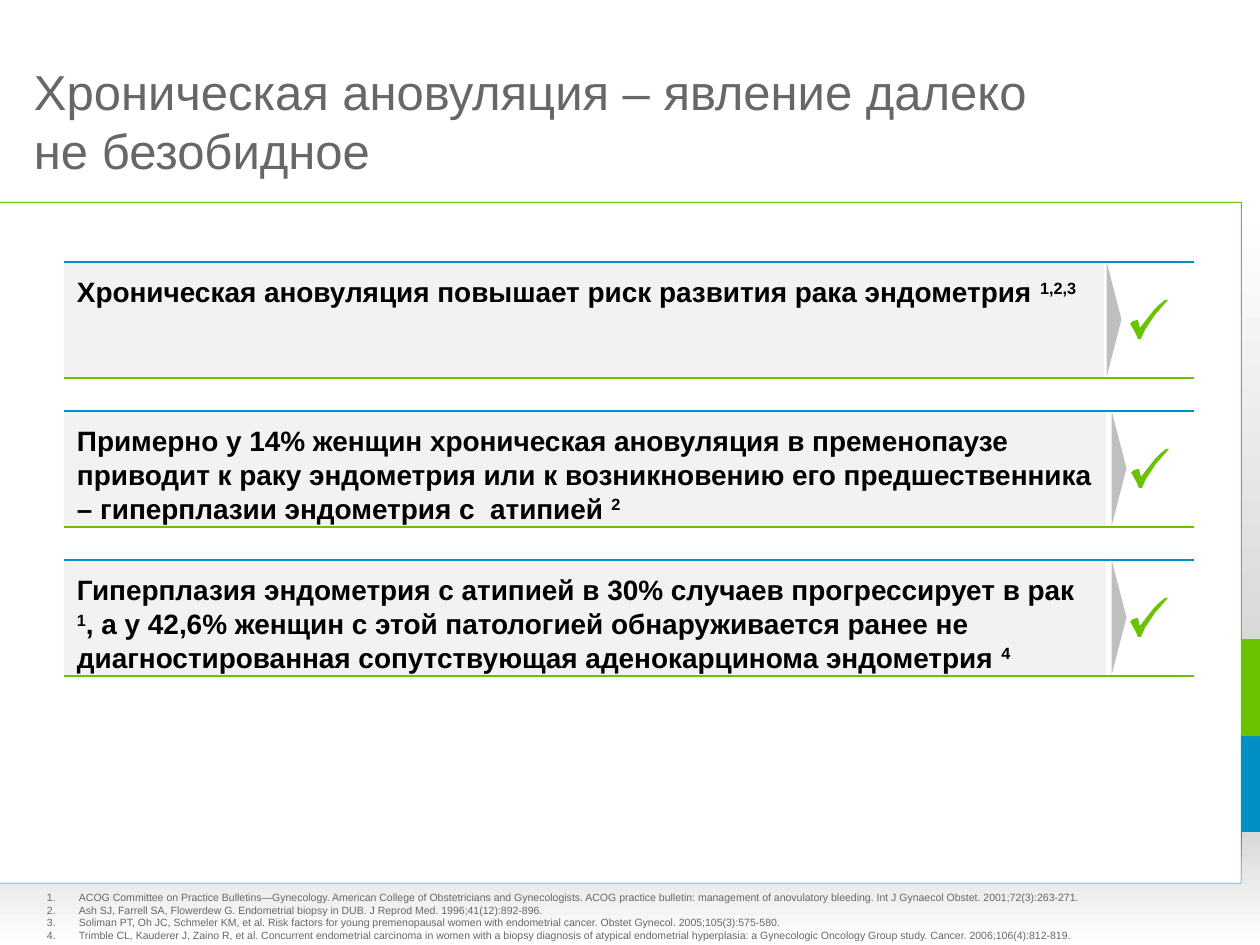
from dataclasses import dataclass

from lxml.etree import SubElement
from pptx import Presentation
from pptx.dml.color import RGBColor
from pptx.enum.shapes import MSO_CONNECTOR, MSO_SHAPE
from pptx.enum.text import MSO_ANCHOR, PP_ALIGN
from pptx.oxml.ns import qn
from pptx.util import Pt

TITLE = "Хроническая ановуляция – явление далеко не безобидное"

# Text between ^ marks is superscript.
FACTS = [
    "Хроническая ановуляция повышает риск развития рака эндометрия ^1,2,3^",
    "Примерно у 14% женщин хроническая ановуляция в пременопаузе приводит "
    "к раку эндометрия или к возникновению его предшественника – "
    "гиперплазии эндометрия с  атипией ^2^",
    "Гиперплазия эндометрия с атипией в 30% случаев прогрессирует в рак "
    "^1^, а у 42,6% женщин с этой патологией обнаруживается ранее не "
    "диагностированная сопутствующая аденокарцинома эндометрия ^4^",
]

REFS = [
    "ACOG Committee on Practice Bulletins—Gynecology. American College of "
    "Obstetricians and Gynecologists. ACOG practice bulletin: management of "
    "anovulatory bleeding. Int J Gynaecol Obstet. 2001;72(3):263-271.",
    "Ash SJ, Farrell SA, Flowerdew G. Endometrial biopsy in DUB. "
    "J Reprod Med. 1996;41(12):892-896.",
    "Soliman PT, Oh JC, Schmeler KM, et al. Risk factors for young "
    "premenopausal women with endometrial cancer. Obstet Gynecol. "
    "2005;105(3):575-580.",
    "Trimble CL, Kauderer J, Zaino R, et al. Concurrent endometrial carcinoma "
    "in women with a biopsy diagnosis of atypical endometrial hyperplasia: a "
    "Gynecologic Oncology Group study. Cancer. 2006;106(4):812-819.",
]

BLUE_EDGE = [(1260, 735), (1241, 735), (1241, 883), (0, 883),
             (0, 884), (1242, 884), (1242, 832), (1260, 832)]
FOOT = [(1260, 945), (1260, 832), (1242, 832), (1242, 884), (0, 884), (0, 945)]
GREEN_EDGE = [(1242, 639), (1242, 202), (0, 202), (0, 203),
              (1241, 203), (1241, 736), (1260, 736), (1260, 639)]
TICK = [(0, 24), (3, 21), (8, 20), (10, 28), (24, 10), (29, 5), (35, 0),
        (38, 0), (25, 15), (15, 30), (11, 39), (8, 39), (6, 34), (1, 25)]

LEFT, RIGHT, TOP, STEP, HIGH = 64, 1194, 262, 149, 116
WIDTHS = [1040, 1042, 1042]
ARROWS = [1114, 1119, 1119]
TICKS = [1130, 1131, 1130]


@dataclass(frozen=True)
class Theme:
    font: str = "Arial"
    green: str = "6BC200"
    blue: str = "0090C5"
    gray: str = "676767"
    panel: str = "F2F2F2"
    arrow: str = "BFBFBF"
    shade: str = "D9D9D9"
    white: str = "FFFFFF"
    black: str = "000000"
    title: int = 28
    body: int = 16
    note: int = 6


T = Theme()
SCALE = 914400 / 126


def px(n):
    return round(n * SCALE)


def rgb(code):
    return RGBColor.from_string(code)


def paint(shape, color, turn=None):
    """Fill with a plain colour, or fade it to white along the angle turn."""
    shape.shadow.inherit = False
    shape.line.fill.background()
    if turn is None:
        shape.fill.solid()
        shape.fill.fore_color.rgb = rgb(color)
        return
    shape.fill.gradient()
    shape.fill.gradient_angle = turn
    for stop, code, place in zip(shape.fill.gradient_stops,
                                 (color, T.white), (0, 1)):
        stop.color.rgb = rgb(code)
        stop.position = place


def block(slide, kind, x, y, w, h, color, turn=None):
    shape = slide.shapes.add_shape(kind, px(x), px(y), px(w), px(h))
    paint(shape, color, turn)
    return shape


def outline(slide, points, color, turn=None, dx=0, dy=0):
    moved = [(x + dx, y + dy) for x, y in points]
    draft = slide.shapes.build_freeform(*moved[0], scale=SCALE)
    draft.add_line_segments(moved[1:], close=True)
    paint(draft.convert_to_shape(), color, turn)


def rule(slide, y, color):
    line = slide.shapes.add_connector(
        MSO_CONNECTOR.STRAIGHT, px(LEFT), px(y), px(RIGHT), px(y))
    line.line.color.rgb = rgb(color)
    line.line.width = Pt(0.75)
    SubElement(line._element.spPr, qn("a:effectLst"))


def write(shape, lines, size, color, bold=False, anchor=MSO_ANCHOR.TOP,
          inset=(0, 0), numbered=False):
    frame = shape.text_frame
    frame.word_wrap = True
    frame.vertical_anchor = anchor
    frame.margin_left = frame.margin_right = px(inset[0])
    frame.margin_top = frame.margin_bottom = px(inset[1])
    for i, line in enumerate(lines):
        para = frame.add_paragraph() if i else frame.paragraphs[0]
        para.alignment = PP_ALIGN.LEFT
        if numbered:
            props = para._p.get_or_add_pPr()
            props.set("marL", str(px(32)))
            props.set("indent", str(px(-32)))
            SubElement(props, qn("a:buFont"), typeface="+mj-lt")
            SubElement(props, qn("a:buAutoNum"), type="arabicPeriod")
        for j, part in enumerate(line.split("^")):
            if not part:
                continue
            run = para.add_run()
            run.text = part
            font = run.font
            font.name, font.size, font.bold = T.font, Pt(size), bold
            font.color.rgb = rgb(color)
            if j % 2:
                run._r.get_or_add_rPr().set("baseline", "30000")


def label(slide, x, y, w, h, lines, **style):
    box = slide.shapes.add_textbox(px(x), px(y), px(w), px(h))
    write(box, lines, **style)


def frame(slide):
    outline(slide, BLUE_EDGE, T.blue)
    outline(slide, FOOT, T.shade, turn=270)
    outline(slide, GREEN_EDGE, T.green)
    block(slide, MSO_SHAPE.RECTANGLE, 1242, 202, 18, 437, T.shade, turn=90)


def fact(slide, i, text):
    y = TOP + i * STEP
    panel = block(slide, MSO_SHAPE.RECTANGLE, LEFT, y, WIDTHS[i], HIGH, T.panel)
    write(panel, [text], T.body, T.black, bold=True, inset=(13, 13))
    rule(slide, y + HIGH, T.green)
    rule(slide, y, T.blue)
    arrow = block(slide, MSO_SHAPE.ISOSCELES_TRIANGLE, ARROWS[i] - HIGH / 2,
                  y + HIGH / 2 - 8, HIGH, 15, T.arrow)
    arrow.rotation = 90
    outline(slide, TICK, T.green, dx=TICKS[i], dy=y + 38)


def main():
    deck = Presentation()
    deck.slide_width, deck.slide_height = px(1260), px(945)
    slide = deck.slides.add_slide(deck.slide_layouts[6])
    frame(slide)
    label(slide, 34, 66, 993, 113, [TITLE], size=T.title, color=T.gray,
          anchor=MSO_ANCHOR.BOTTOM)
    for i, text in enumerate(FACTS):
        fact(slide, i, text)
    label(slide, 34, 885, 1191, 64, REFS, size=T.note, color=T.gray,
          inset=(13, 6), numbered=True)
    deck.save("out.pptx")


if __name__ == "__main__":
    main()
